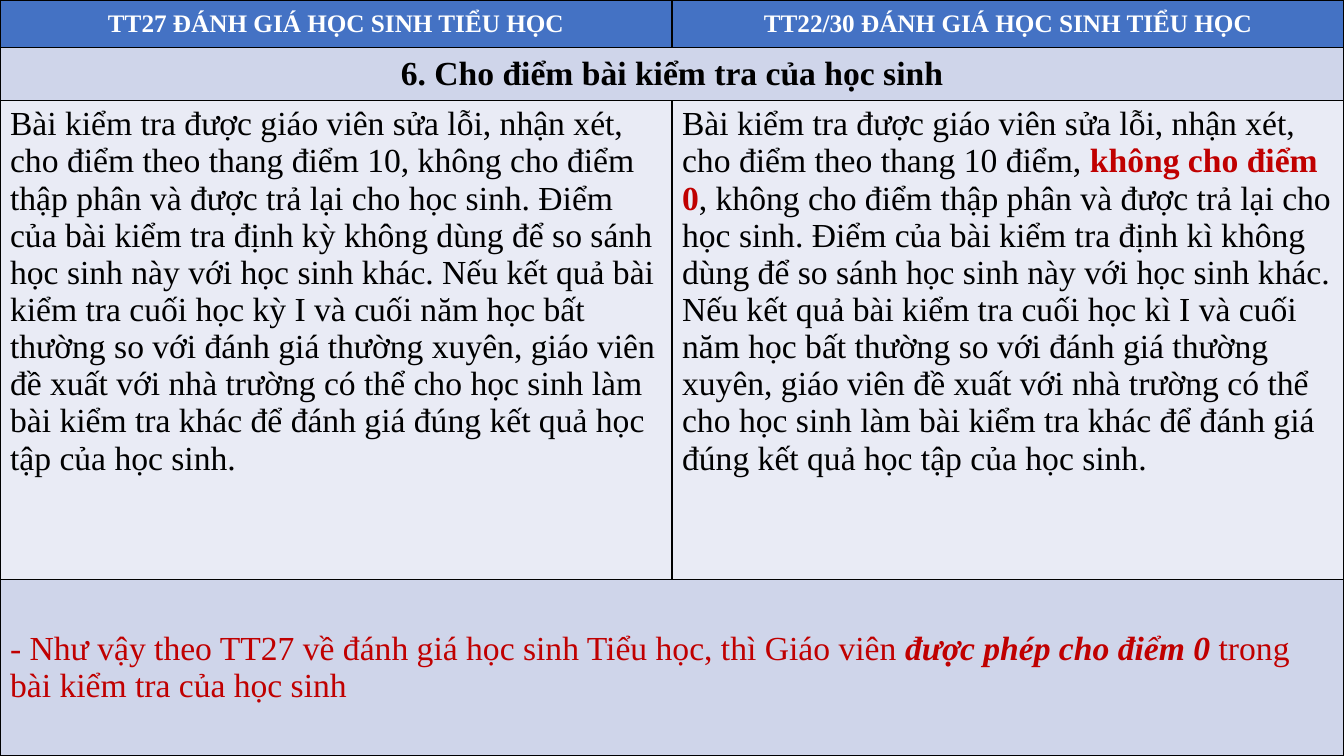
from lxml.etree import SubElement
from pptx import Presentation
from pptx.dml.color import RGBColor
from pptx.enum.text import MSO_ANCHOR as Anchor, PP_ALIGN as Align
from pptx.oxml.ns import qn
from pptx.util import Inches, Pt

WHITE, BLACK, RED = "FFFFFF", "000000", "C00000"
BLUE, BAND, PALE = "4472C4", "CFD5EA", "E9EBF5"
ROW_SHARES = [0.47 / 7.5, 0.53 / 7.5, 4.75 / 7.5, 1.75 / 7.5]
COLUMN_SHARES = [0.5, 0.5]

HEADER = {"size": Pt(18), "bold": True}
TITLE = {"bold": True}
PLAIN = {}
STRONG = {"bold": True}
STRONG_ITALIC = {"bold": True, "italic": True}

TT27_TEXT = (
    "Bài kiểm tra được giáo viên sửa lỗi, nhận xét, cho điểm theo thang điểm 10, "
    "không cho điểm thập phân và được trả lại cho học sinh. Điểm của bài kiểm tra "
    "định kỳ không dùng để so sánh học sinh này với học sinh khác. Nếu kết quả bài "
    "kiểm tra cuối học kỳ I và cuối năm học bất thường so với đánh giá thường xuyên, "
    "giáo viên đề xuất với nhà trường có thể cho học sinh làm bài kiểm tra khác để "
    "đánh giá đúng kết quả học tập của học sinh."
)
TT22_START = (
    "Bài kiểm tra được giáo viên sửa lỗi, nhận xét, cho điểm theo thang 10 điểm, "
)
TT22_END = (
    ", không cho điểm thập phân và được trả lại cho học sinh. Điểm của bài kiểm tra "
    "định kì không dùng để so sánh học sinh này với học sinh khác. Nếu kết quả bài "
    "kiểm tra cuối học kì I và cuối năm học bất thường so với đánh giá thường xuyên, "
    "giáo viên đề xuất với nhà trường có thể cho học sinh làm bài kiểm tra khác để "
    "đánh giá đúng kết quả học tập của học sinh."
)


def color(value):
    return RGBColor.from_string(value)


class SlideBuilder:
    font_name = "Times New Roman"
    text_size = Pt(24)
    border_color = BLACK
    border_width = Pt(1)

    def __init__(self, presentation):
        self.width = presentation.slide_width
        self.height = presentation.slide_height
        self.slide = presentation.slides.add_slide(presentation.slide_layouts[6])

    def add_table(self, row_shares, column_shares):
        """Add a table over the whole slide, with rows and columns as shares of it."""
        table = self.slide.shapes.add_table(
            len(row_shares), len(column_shares), 0, 0, self.width, self.height
        ).table
        for row, share in zip(table.rows, row_shares):
            row.height = int(self.height * share)
        for column, share in zip(table.columns, column_shares):
            column.width = int(self.width * share)
        for cell in table.iter_cells():
            self.add_borders(cell)
        return table

    def add_borders(self, cell):
        properties = cell._tc.get_or_add_tcPr()
        for side in ("a:lnL", "a:lnR", "a:lnT", "a:lnB"):
            line = SubElement(properties, qn(side), w=str(self.border_width))
            fill = SubElement(line, qn("a:solidFill"))
            SubElement(fill, qn("a:srgbClr"), val=self.border_color)

    def fill_cell(self, cell, fill, runs, align=Align.LEFT, anchor=Anchor.MIDDLE):
        """Fill a cell and write its runs, each a (text, colour, format) triple."""
        cell.fill.solid()
        cell.fill.fore_color.rgb = color(fill)
        cell.vertical_anchor = anchor
        paragraph = cell.text_frame.paragraphs[0]
        paragraph.alignment = align
        base = {"name": self.font_name, "size": self.text_size,
                "bold": False, "italic": False}
        for text, text_color, run_format in runs:
            run = paragraph.add_run()
            run.text = text
            run.font.color.rgb = color(text_color)
            for name, value in {**base, **run_format}.items():
                setattr(run.font, name, value)


def main():
    presentation = Presentation()
    presentation.slide_width = Inches(13.33)
    presentation.slide_height = Inches(7.5)
    builder = SlideBuilder(presentation)
    table = builder.add_table(ROW_SHARES, COLUMN_SHARES)

    for row in (1, 3):
        table.cell(row, 0).merge(table.cell(row, 1))

    headers = ["TT27 ĐÁNH GIÁ HỌC SINH TIỂU HỌC", "TT22/30 ĐÁNH GIÁ HỌC SINH TIỂU HỌC"]
    rules = [
        [(TT27_TEXT, BLACK, PLAIN)],
        [(TT22_START, BLACK, PLAIN),
         ("không cho điểm 0", RED, STRONG),
         (TT22_END, BLACK, PLAIN)],
    ]
    for column, (header, rule) in enumerate(zip(headers, rules)):
        builder.fill_cell(table.cell(0, column), BLUE, [(header, WHITE, HEADER)],
                          align=Align.CENTER)
        builder.fill_cell(table.cell(2, column), PALE, rule, anchor=Anchor.TOP)

    title = [("6. Cho điểm bài kiểm tra của học sinh", BLACK, TITLE)]
    builder.fill_cell(table.cell(1, 0), BAND, title, align=Align.CENTER)

    conclusion = [
        ("- Như vậy theo TT27 về đánh giá học sinh Tiểu học, thì Giáo viên ", RED, PLAIN),
        ("được phép cho điểm 0 ", RED, STRONG_ITALIC),
        ("trong bài kiểm tra của học sinh", RED, PLAIN),
    ]
    builder.fill_cell(table.cell(3, 0), BAND, conclusion)

    presentation.save("out.pptx")


if __name__ == "__main__":
    main()
